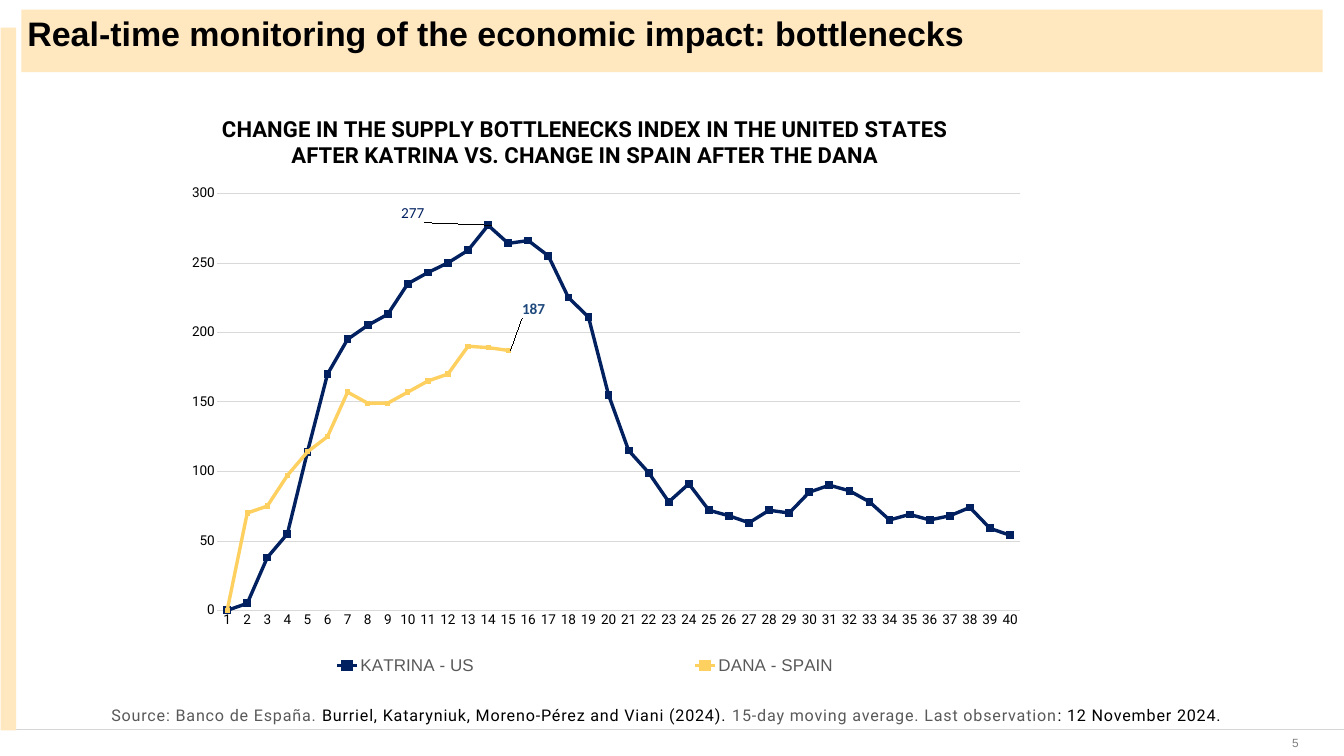
from dataclasses import dataclass

from lxml import etree
from pptx import Presentation
from pptx import util as u
from pptx.chart import data as cd
from pptx.dml.color import RGBColor
from pptx.enum import chart as ec, shapes, text
from pptx.oxml import parse_xml
from pptx.oxml.ns import nsdecls, qn


@dataclass(frozen=True)
class Theme:
    """Colours, fonts and type sizes of the slide."""
    sand: str = "FFE8C0"
    rule: str = "D6D6D6"
    grid: str = "D9D9D9"
    black: str = "000000"
    gray: str = "595959"
    pale: str = "808080"
    navy: str = "002060"
    gold: str = "FED060"
    blue: str = "1F497D"
    sans: str = "Arial"
    body: str = "Roboto"
    num: str = "Calibri"
    head: float = 40
    title: float = 26
    key: float = 20
    note: float = 19
    label: float = 18
    tick: float = 16
    page: float = 14


T = Theme()
KATRINA = [0, 5, 38, 55, 114, 170, 195, 205, 213, 235, 243, 250, 259, 277,
           264, 266, 255, 225, 211, 155, 115, 99, 78, 91, 72, 68, 63, 72, 70,
           85, 90, 86, 78, 65, 69, 65, 68, 74, 59, 54]
DANA = [0, 70, 75, 97, 114, 125, 157, 149, 149, 157, 165, 170, 190, 189, 187]
LEAD = (f'<c:extLst {nsdecls("c")}><c:ext uri="{{CE6537A1-D6FC-4f65-9D91-7224C49458BB}}" '
        'xmlns:c15="http://schemas.microsoft.com/office/drawing/2012/chart">'
        '<c15:showLeaderLines val="1"/></c:ext></c:extLst>')


def style(font, size, color, face, bold=False):
    """Set size, colour, face and weight of a font."""
    font.size, font.name, font.bold = u.Pt(size), face, bold
    font.color.rgb = RGBColor.from_string(color)


def write(para, words, space=0, **form):
    """Add a formatted run to a paragraph."""
    run = para.add_run()
    run.text = words
    style(run.font, **form)
    if space:
        run.font._element.set("spc", str(space))


def stroke(line, color, width):
    """Set colour and width of a line."""
    line.color.rgb = RGBColor.from_string(color)
    line.width = u.Pt(width)


def place(node, **parts):
    """Give a chart part a manual layout."""
    for old in node.findall(qn("c:layout")):
        node.remove(old)
    tags = "".join(f'<c:{k} val="{v}"/>' for k, v in parts.items())
    spot = parse_xml(f'<c:layout {nsdecls("c")}><c:manualLayout>{tags}'
                     '</c:manualLayout></c:layout>')
    node.insert(0 if node.tag == qn("c:plotArea") else 1, spot)


class Deck:
    """Draw elements on a slide, with lengths in percent of its size."""

    def __init__(self, wide, high):
        """Start a deck with one blank slide."""
        self.prs = Presentation()
        self.prs.slide_width, self.prs.slide_height = u.Inches(wide), u.Inches(high)
        self.slide = self.prs.slides.add_slide(self.prs.slide_layouts[6])

    def box(self, x, y, w, h):
        """Turn percent shares into slide lengths."""
        wide, high = self.prs.slide_width, self.prs.slide_height
        return [round(n * full / 100) for n, full in zip((x, y, w, h), (wide, high) * 2)]

    def rule(self, x, y, end):
        """Draw a thin level line."""
        left, top, right, _ = self.box(x, y, end, 0)
        line = self.slide.shapes.add_connector(
            shapes.MSO_CONNECTOR.STRAIGHT, left, top, right, top)
        stroke(line.line, T.rule, 0.82)
        etree.SubElement(line._element.spPr, qn("a:effectLst"))

    def band(self, *at):
        """Draw a sand rectangle."""
        rect = self.slide.shapes.add_shape(shapes.MSO_SHAPE.RECTANGLE, *self.box(*at))
        rect.shadow.inherit = False
        rect.fill.solid()
        rect.fill.fore_color.rgb = RGBColor.from_string(T.sand)
        rect.line.fill.background()
        return rect

    def area(self, *at):
        """Add an empty text box."""
        return self.slide.shapes.add_textbox(*self.box(*at))

    def fill(self, shape, runs, align=text.PP_ALIGN.LEFT, inset=0.45, **form):
        """Write coloured runs into a shape and return its paragraph."""
        frame = shape.text_frame
        frame.word_wrap = True
        frame.vertical_anchor = text.MSO_ANCHOR.TOP
        frame.margin_left = self.box(inset, 0, 0, 0)[0]
        para = frame.paragraphs[0]
        para.alignment = align
        for words, color in runs:
            write(para, words, color=color, **form)
        return para

    def chart(self, at, title, rows):
        """Add a line chart with one row per series."""
        data = cd.CategoryChartData(number_format="0")
        count = max(len(row[1]) for row in rows)
        data.categories = [str(n + 1) for n in range(count)]
        for name, vals, *_ in rows:
            data.add_series(name, vals + [None] * (count - len(vals)))
        chart = self.slide.shapes.add_chart(
            ec.XL_CHART_TYPE.LINE_MARKERS, *self.box(*at), data).chart
        style(chart.font, 10, T.black, T.num)
        write(chart.chart_title.text_frame.paragraphs[0], title,
              size=T.title, color=T.black, face=T.body, bold=True)
        chart.chart_title.include_in_layout = True
        self.axes(chart)
        chart.has_legend = True
        chart.legend.position = ec.XL_LEGEND_POSITION.BOTTOM
        chart.legend.include_in_layout = False
        style(chart.legend.font, T.key, T.gray, T.sans)
        edge = dict(xMode="edge", yMode="edge")
        place(chart.legend._element, **edge, x=0, y=0.93, w=1, h=0.06)
        place(chart._chartSpace.chart.plotArea, layoutTarget="inner", **edge,
              x=0.103, y=0.165, w=0.866, h=0.702)
        chart.plots[0].vary_by_categories = False
        for ser, row in zip(chart.plots[0].series, rows):
            self.series(ser, *row[2:])

    def axes(self, chart):
        """Format both axes and the grid."""
        for axis in (chart.category_axis, chart.value_axis):
            axis.major_tick_mark = axis.minor_tick_mark = ec.XL_TICK_MARK.NONE
            style(axis.tick_labels.font, T.tick, T.black, T.body)
        stroke(chart.category_axis.format.line, T.grid, 0.75)
        value = chart.value_axis
        value.format.line.fill.background()
        value.minimum_scale, value.maximum_scale, value.major_unit = 0, 300, 50
        stroke(value.major_gridlines.format.line, T.grid, 0.75)

    def series(self, ser, color, size, spot, shift, tint, bold):
        """Format one series and label one of its points."""
        ser.smooth = False
        stroke(ser.format.line, color, 4)
        mark = ser.marker
        mark.style, mark.size = ec.XL_MARKER_STYLE.SQUARE, size
        mark.format.fill.solid()
        mark.format.fill.fore_color.rgb = RGBColor.from_string(color)
        stroke(mark.format.line, color, 0.75)
        tag = ser.points[spot].data_label
        style(tag.font, T.label, tint, T.num, bold)
        tag.position = ec.XL_LABEL_POSITION.RIGHT
        ser.data_labels.show_value = False
        node = ser.data_labels._element
        place(node.find(qn("c:dLbl")), x=shift[0], y=shift[1])
        node.append(parse_xml(LEAD))


def main():
    """Build and save the slide."""
    deck = Deck(21.99, 12.37)
    deck.rule(1.2, 96.52, 100)
    deck.band(0.05, 3.64, 1.16, 92.97)
    deck.fill(deck.area(93.18, 96.85, 3.91, 2.75), [("5", T.pale)],
              text.PP_ALIGN.RIGHT, size=T.page, face=T.sans)
    deck.fill(deck.band(1.59, 1.29, 96.82, 8.25),
              [("Real-time monitoring of the economic impact: bottlenecks", T.black)],
              size=T.head, face=T.sans, bold=True)
    note = deck.fill(deck.area(2.64, 93.05, 88.68, 4.93), [
        ("Source: Banco de España. ", T.gray),
        ("Burriel, Kataryniuk, Moreno-Pérez and Viani (2024).", T.black),
        (" 15-day moving average. Last observation", T.gray),
        (": 12 November 2024.", T.black),
    ], inset=5.64, size=T.note, face=T.body, space=100)
    note.line_spacing, note.space_after = u.Pt(21.6), u.Pt(4.3)
    deck.chart(
        (9.05, 12.61, 68.99, 78.58),
        "CHANGE IN THE SUPPLY BOTTLENECKS INDEX IN THE UNITED STATES "
        "AFTER KATRINA VS. CHANGE IN SPAIN AFTER THE DANA",
        [("KATRINA - US", KATRINA, T.navy, 8, 13, (-0.1, -0.02), T.navy, False),
         ("DANA - SPAIN", DANA, T.gold, 5, 14, (0.01, -0.07), T.blue, True)])
    deck.prs.save("out.pptx")


if __name__ == "__main__":
    main()
